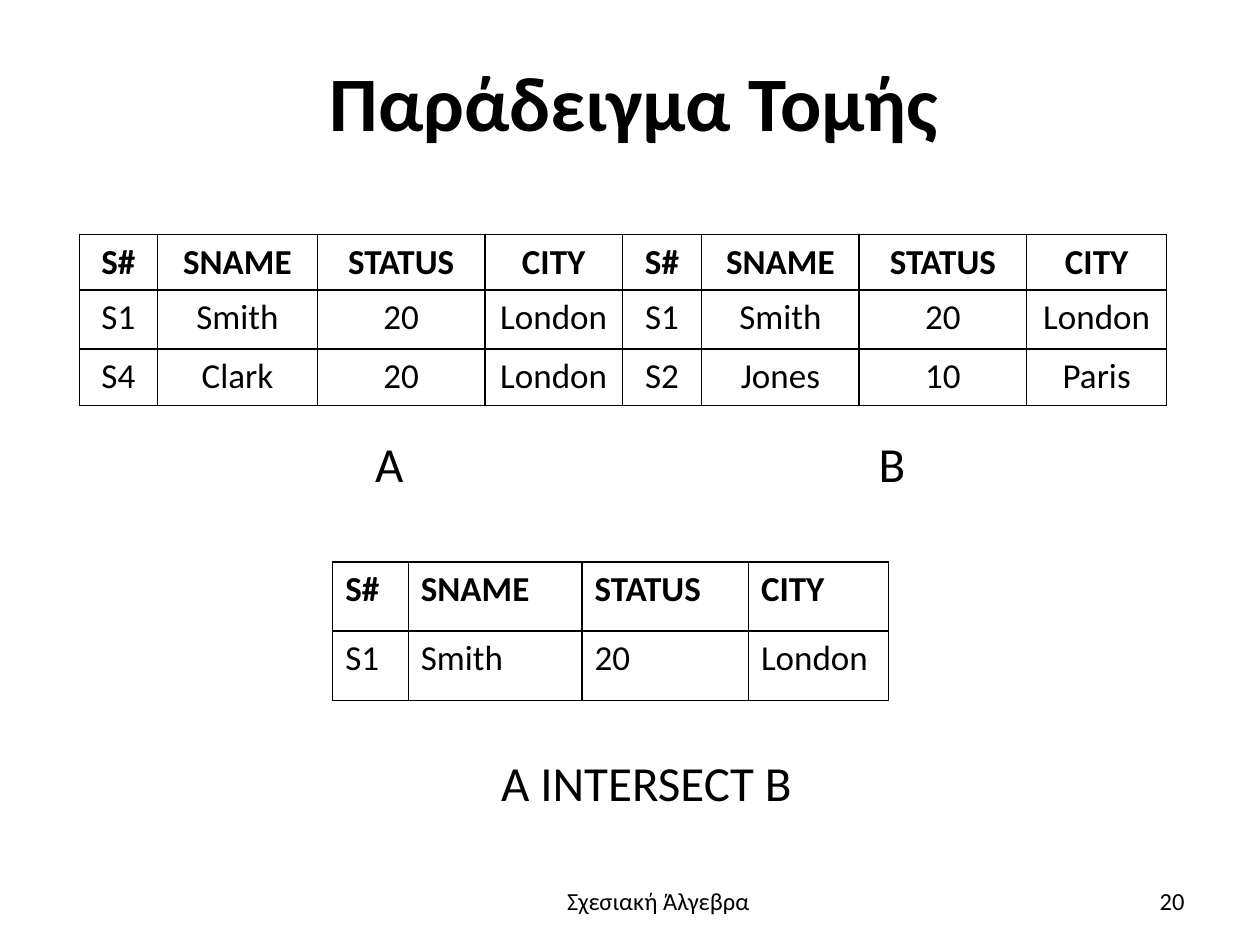
from lxml.etree import SubElement
from pptx import Presentation
from pptx.dml.color import RGBColor
from pptx.enum.text import MSO_ANCHOR, PP_ALIGN
from pptx.oxml.ns import qn
from pptx.util import Inches, Pt

BLACK = RGBColor(0x00, 0x00, 0x00)
FONT = "Calibri"


def write(frame, text, size, align, bold=False):
    frame.text = text
    para = frame.paragraphs[0]
    para.alignment = align
    font = para.runs[0].font
    font.name, font.size, font.bold = FONT, Pt(size), bold
    font.color.rgb = BLACK


def add_relation(left, top, widths, heights, rows, align):
    """Add an unfilled table with black borders and a bold header row."""
    table = slide.shapes.add_table(
        len(rows), len(widths), Inches(left), Inches(top),
        Inches(sum(widths)), Inches(sum(heights))).table
    table.first_row = table.horz_banding = False
    for column, width in zip(table.columns, widths):
        column.width = Inches(width)
    for row, height in zip(table.rows, heights):
        row.height = Inches(height)
    for row_index, values in enumerate(rows):
        for column_index, value in enumerate(values):
            cell = table.cell(row_index, column_index)
            write(cell.text_frame, value, 20, align, bold=row_index == 0)
            properties = cell._tc.get_or_add_tcPr()
            for side in ("a:lnL", "a:lnR", "a:lnT", "a:lnB"):
                border = SubElement(properties, qn(side), w=str(Pt(1)))
                fill = SubElement(border, qn("a:solidFill"))
                SubElement(fill, qn("a:srgbClr"), val=str(BLACK))
            cell.fill.background()


deck = Presentation()
deck.slide_width, deck.slide_height = Inches(10), Inches(7.5)
slide = deck.slides.add_slide(deck.slide_layouts[5])

title = slide.shapes.title
title.left, title.top = Inches(0.43), Inches(0.13)
title.width, title.height = Inches(9.21), Inches(1.38)
frame = title.text_frame
frame.margin_left = frame.margin_right = frame.margin_bottom = 0
frame.margin_top = Inches(0.02)
frame.vertical_anchor = MSO_ANCHOR.MIDDLE
write(frame, "Παράδειγμα Τομής", 44, PP_ALIGN.CENTER, bold=True)
frame.paragraphs[0].line_spacing = 0.98

header = ["S#", "SNAME", "STATUS", "CITY"]
smith = ["S1", "Smith", "20", "London"]
clark = ["S4", "Clark", "20", "London"]
jones = ["S2", "Jones", "10", "Paris"]

add_relation(0.63, 1.86, [0.62, 1.27, 1.33, 1.09, 0.63, 1.25, 1.33, 1.11],
             [0.4, 0.47, 0.45],
             [header + header, smith + smith, clark + jones], PP_ALIGN.CENTER)
add_relation(2.64, 4.46, [0.6, 1.38, 1.32, 1.11], [0.55, 0.55],
             [header, smith], PP_ALIGN.LEFT)

# text, left, top, width, height, size, alignment, anchor
labels = [
    ("Α", 2.59, 3.39, 1, 0.57, 28, PP_ALIGN.CENTER, MSO_ANCHOR.MIDDLE),
    ("Β", 6.58, 3.39, 1, 0.57, 28, PP_ALIGN.CENTER, MSO_ANCHOR.MIDDLE),
    ("Α INTERSECT B", 3.63, 5.92, 3, 0.57, 28, PP_ALIGN.CENTER, MSO_ANCHOR.MIDDLE),
    ("Σχεσιακή Άλγεβρα", 3.48, 6.98, 3.49, 0.5, 14, PP_ALIGN.CENTER, MSO_ANCHOR.TOP),
    ("20", 7.17, 6.95, 2.33, 0.4, 14, PP_ALIGN.RIGHT, MSO_ANCHOR.MIDDLE),
]
for text, left, top, width, height, size, align, anchor in labels:
    box = slide.shapes.add_textbox(
        Inches(left), Inches(top), Inches(width), Inches(height))
    box.text_frame.word_wrap = True
    box.text_frame.vertical_anchor = anchor
    write(box.text_frame, text, size, align)

deck.save("out.pptx")
